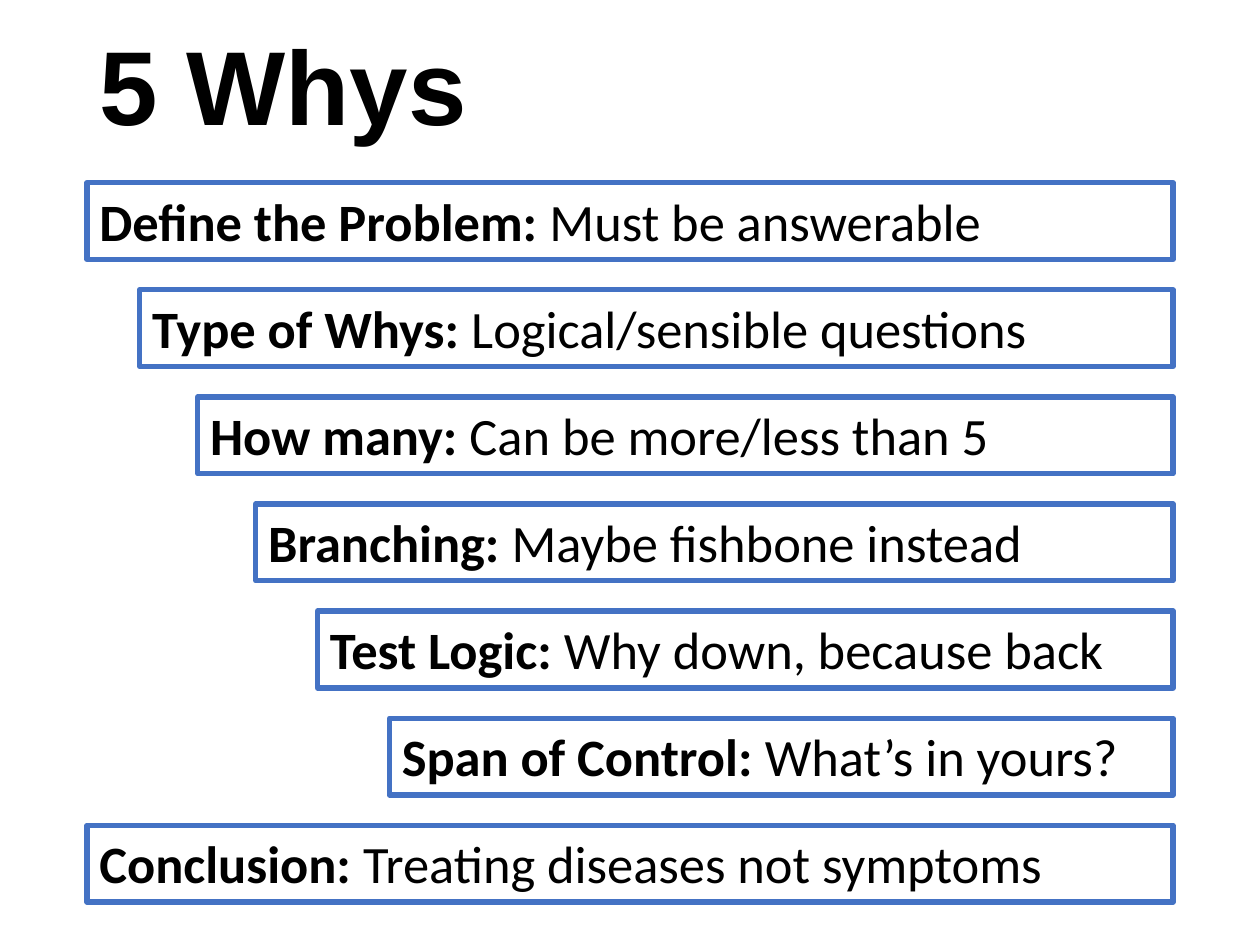
from pptx import Presentation
from pptx.dml.color import RGBColor
from pptx.enum import shapes, text
from pptx.util import Inches, Pt

BLACK = RGBColor(0x00, 0x00, 0x00)
BLUE = RGBColor(0x44, 0x72, 0xC4)

LEFT, RIGHT = 0.69, 9.31
FIRST_STEP_TOP, STEP_PITCH, STEP_HEIGHT = 1.45, 0.85, 0.61

# Left edge, label, explanation
STEPS = [
    (LEFT, "Define the Problem:", "Must be answerable"),
    (1.11, "Type of Whys:", "Logical/sensible questions"),
    (1.57, "How many:", "Can be more/less than 5"),
    (2.03, "Branching:", "Maybe fishbone instead"),
    (2.52, "Test Logic:", "Why down, because back"),
    (3.09, "Span of Control:", "What’s in yours?"),
    (LEFT, "Conclusion:", "Treating diseases not symptoms"),
]


def add_run(paragraph, wording, *, size, font="Calibri", bold=False, color=BLACK):
    run = paragraph.add_run()
    run.text = wording
    run.font.name = font
    run.font.size = Pt(size)
    run.font.bold = bold
    run.font.color.rgb = color


def add_title(slide, left, top, width, height):
    title = slide.shapes.add_textbox(
        Inches(left), Inches(top), Inches(width), Inches(height))
    frame = title.text_frame
    frame.word_wrap = True
    frame.vertical_anchor = text.MSO_ANCHOR.MIDDLE
    paragraph = frame.paragraphs[0]
    paragraph.line_spacing = 0.9
    add_run(paragraph, "5 Whys", size=60, font="Arial", bold=True)


def add_step(slide, left, top, width, height, label, explanation):
    step = slide.shapes.add_shape(
        shapes.MSO_SHAPE.RECTANGLE,
        Inches(left), Inches(top), Inches(width), Inches(height))
    step.shadow.inherit = False
    step.fill.background()
    step.line.color.rgb = BLUE
    step.line.width = Pt(3)
    frame = step.text_frame
    frame.word_wrap = True
    frame.auto_size = text.MSO_AUTO_SIZE.SHAPE_TO_FIT_TEXT
    frame.vertical_anchor = text.MSO_ANCHOR.TOP
    paragraph = frame.paragraphs[0]
    paragraph.alignment = text.PP_ALIGN.LEFT
    add_run(paragraph, label + " ", size=30, bold=True)
    add_run(paragraph, explanation, size=30)


def add_staircase(slide, top, right):
    """Stack the steps at an equal pitch, all ending at the same right edge."""
    for row, (left, label, explanation) in enumerate(STEPS):
        add_step(slide, left, top + row * STEP_PITCH, right - left, STEP_HEIGHT,
                 label, explanation)


def main():
    deck = Presentation()
    deck.slide_width, deck.slide_height = Inches(10), Inches(7.5)
    slide = deck.slides.add_slide(deck.slide_layouts[6])
    add_title(slide, LEFT, 0, RIGHT - LEFT, FIRST_STEP_TOP)
    add_staircase(slide, FIRST_STEP_TOP, RIGHT)
    deck.save("out.pptx")


if __name__ == "__main__":
    main()
